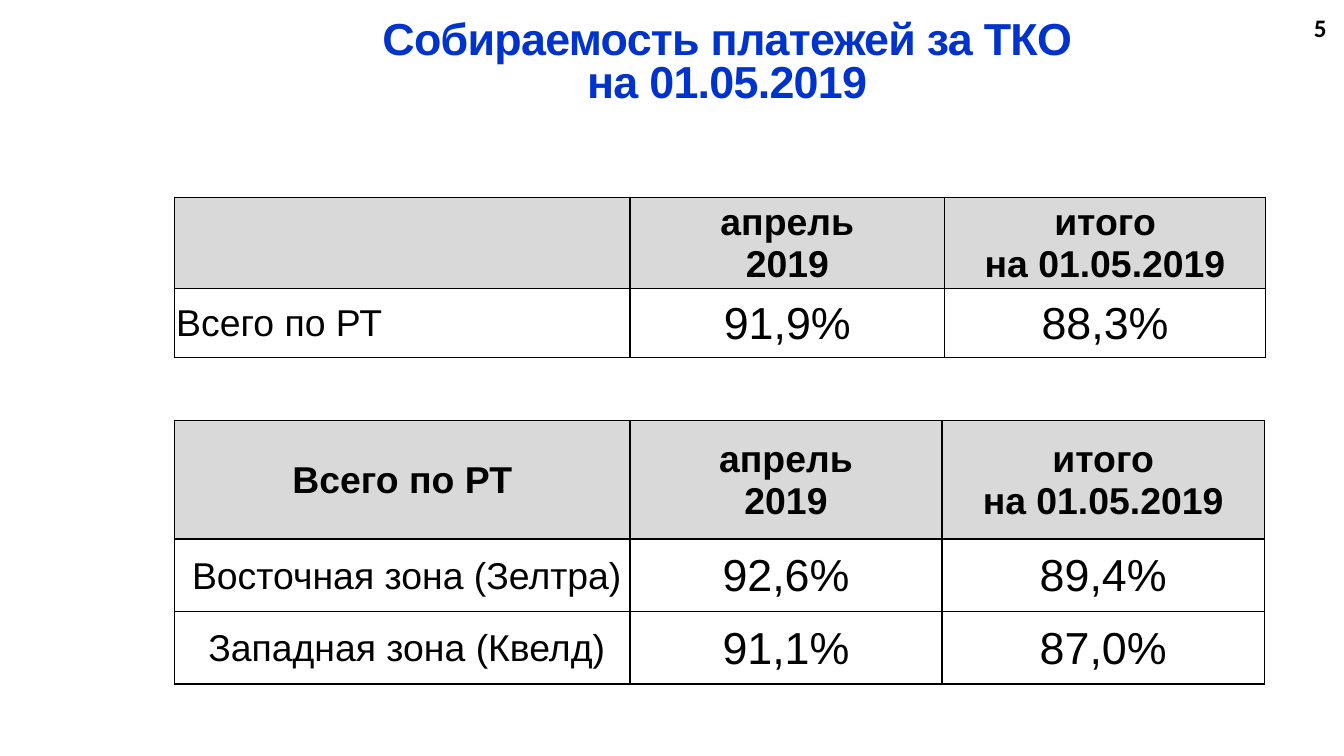
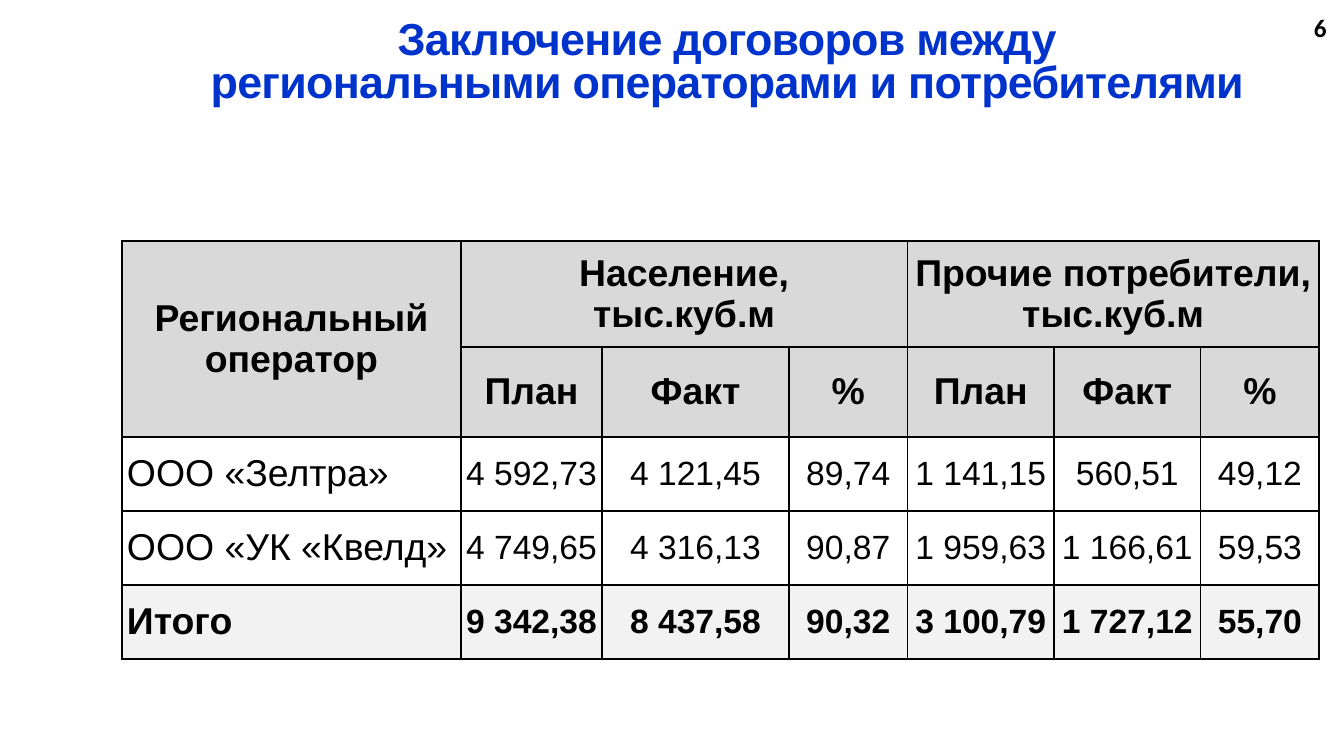
from dataclasses import dataclass

import pptx
import pptx.dml.color
import pptx.enum.text
import pptx.oxml
import pptx.oxml.ns
import pptx.util

Cm = pptx.util.Cm
Pt = pptx.util.Pt
ALIGN = pptx.enum.text.PP_ALIGN
MIDDLE = pptx.enum.text.MSO_ANCHOR.MIDDLE


@dataclass(frozen=True)
class Theme:
    ink: str = "000000"
    title: str = "0033CC"
    header: str = "D9D9D9"
    total: str = "F2F2F2"
    body: str = "FFFFFF"
    font: str = "Arial"
    number_font: str = "Calibri"
    title_size: float = 24
    label_size: float = 20
    rate_size: float = 24
    volume_size: float = 18
    number_size: float = 13.5
    border: float = 1


THEME = Theme()


def rgb(color):
    return pptx.dml.color.RGBColor.from_string(color)


def write(tf, text, size=THEME.label_size, color=THEME.ink, font=THEME.font,
          bold=False, align=ALIGN.CENTER, line_spacing=None, tracking=None):
    tf.word_wrap = True
    for i, line in enumerate(text.split("\n")):
        p = tf.paragraphs[0] if i == 0 else tf.add_paragraph()
        p.alignment = align
        if line_spacing:
            p.line_spacing = line_spacing
        r = p.add_run()
        r.text = line
        r.font.name = font
        r.font.size = Pt(size)
        r.font.bold = bold
        r.font.color.rgb = rgb(color)
        if tracking:
            r.font._element.set("spc", str(round(tracking * 100)))


def set_margins(target, left, top, right, bottom):
    target.margin_left = Cm(left)
    target.margin_top = Cm(top)
    target.margin_right = Cm(right)
    target.margin_bottom = Cm(bottom)


def add_text(s, box, text, margins, **style):
    sp = s.shapes.add_textbox(*map(Cm, box))
    tf = sp.text_frame
    tf.vertical_anchor = MIDDLE
    set_margins(tf, *margins)
    write(tf, text, **style)
    return tf


def add_title(s, box, text):
    tf = add_text(s, box, text, (0.25, 0.13, 0.25, 0.13), size=THEME.title_size,
                  color=THEME.title, bold=True, line_spacing=0.8, tracking=-0.4)
    tf.auto_size = pptx.enum.text.MSO_AUTO_SIZE.SHAPE_TO_FIT_TEXT


def add_number(s, box, number):
    add_text(s, box, str(number), (0.18, 0.1, 0.18, 0.1), size=THEME.number_size,
             font=THEME.number_font, bold=True, align=ALIGN.RIGHT)


def outline(cell):
    tc_pr = cell._tc.get_or_add_tcPr()
    for side in ("lnL", "lnR", "lnT", "lnB"):
        tc_pr.append(pptx.oxml.parse_xml(
            f'<a:{side} {pptx.oxml.ns.nsdecls("a")} w="{Pt(THEME.border)}">'
            f'<a:solidFill><a:srgbClr val="{THEME.ink}"/></a:solidFill></a:{side}>'))


def add_table(s, origin, cols, rows, data, value_size, margins, headers=1, merges=(),
              label_align=ALIGN.LEFT, label_indent=0, total=False):
    size = sum(cols), sum(rows)
    table = s.shapes.add_table(len(rows), len(cols), *map(Cm, origin + size)).table
    table.first_row = table.horz_banding = False
    for column, width in zip(table.columns, cols):
        column.width = Cm(width)
    for row, height in zip(table.rows, rows):
        row.height = Cm(height)
    for top, left, bottom, right in merges:
        table.cell(top, left).merge(table.cell(bottom, right))
    for i, values in enumerate(data):
        is_header = i < headers
        is_total = total and i == len(data) - 1
        fill = THEME.header if is_header else THEME.total if is_total else THEME.body
        for j, text in enumerate(values):
            cell = table.cell(i, j)
            is_label = j == 0 and not is_header
            left, *others = margins
            set_margins(cell, left + label_indent * is_label, *others)
            cell.vertical_anchor = MIDDLE
            outline(cell)
            cell.fill.solid()
            cell.fill.fore_color.rgb = rgb(fill)
            if text:
                write(cell.text_frame, text, bold=is_header or is_total,
                      size=THEME.label_size if is_header or is_label else value_size,
                      align=label_align if is_label else ALIGN.CENTER)


def new_slide(prs, title, number):
    s = prs.slides.add_slide(prs.slide_layouts[6])
    add_title(s, (2.08, 0.25, 23.32, 1.91), title)
    add_number(s, (24.16, 0.13, 1.09, 0.76), number)
    return s


def payments_slide(prs):
    s = new_slide(prs, "Собираемость платежей за ТКО\nна 01.05.2019", 5)
    periods = ["апрель\n2019", "итого\nна 01.05.2019"]
    style = {"value_size": THEME.rate_size, "margins": (0.03, 0.03, 0.03, 0)}
    add_table(s, (3.3, 3.73), (8.61, 5.94, 6.07), (1.62, 1.3),
              [["", *periods], ["Всего по РТ", "91,9%", "88,3%"]], **style)
    add_table(s, (3.3, 7.95), (8.61, 5.89, 6.1), (2.24, 1.37, 1.37),
              [["Всего по РТ", *periods],
               ["Восточная зона (Зелтра)", "92,6%", "89,4%"],
               ["Западная зона (Квелд)", "91,1%", "87,0%"]],
              label_align=ALIGN.CENTER, label_indent=0.17, **style)


def contracts_slide(prs):
    s = new_slide(prs, "Заключение договоров между\n"
                       "региональными операторами и потребителями", 6)
    measures = ["План", "Факт", "%"]
    data = [
        ["Региональный оператор", "Население,\nтыс.куб.м", "", "",
         "Прочие потребители,\nтыс.куб.м", "", ""],
        ["", *measures, *measures],
        ["ООО «Зелтра»", "4 592,73", "4 121,45", "89,74", "1 141,15", "560,51", "49,12"],
        ["ООО «УК «Квелд»", "4 749,65", "4 316,13", "90,87", "1 959,63", "1 166,61", "59,53"],
        ["Итого", "9 342,38", "8 437,58", "90,32", "3 100,79", "1 727,12", "55,70"],
    ]
    add_table(s, (2.31, 4.55), (6.4, 2.67, 3.53, 2.24, 2.77, 2.77, 2.24),
              (2.01, 1.7, 1.4, 1.4, 1.4), data, THEME.volume_size,
              (0.09, 0, 0.09, 0), headers=2, total=True,
              merges=[(0, 0, 1, 0), (0, 1, 0, 3), (0, 4, 0, 6)])


def main():
    prs = pptx.Presentation()
    prs.slide_width = Cm(25.4)
    prs.slide_height = Cm(14.29)
    payments_slide(prs)
    contracts_slide(prs)
    prs.save("out.pptx")


if __name__ == "__main__":
    main()
